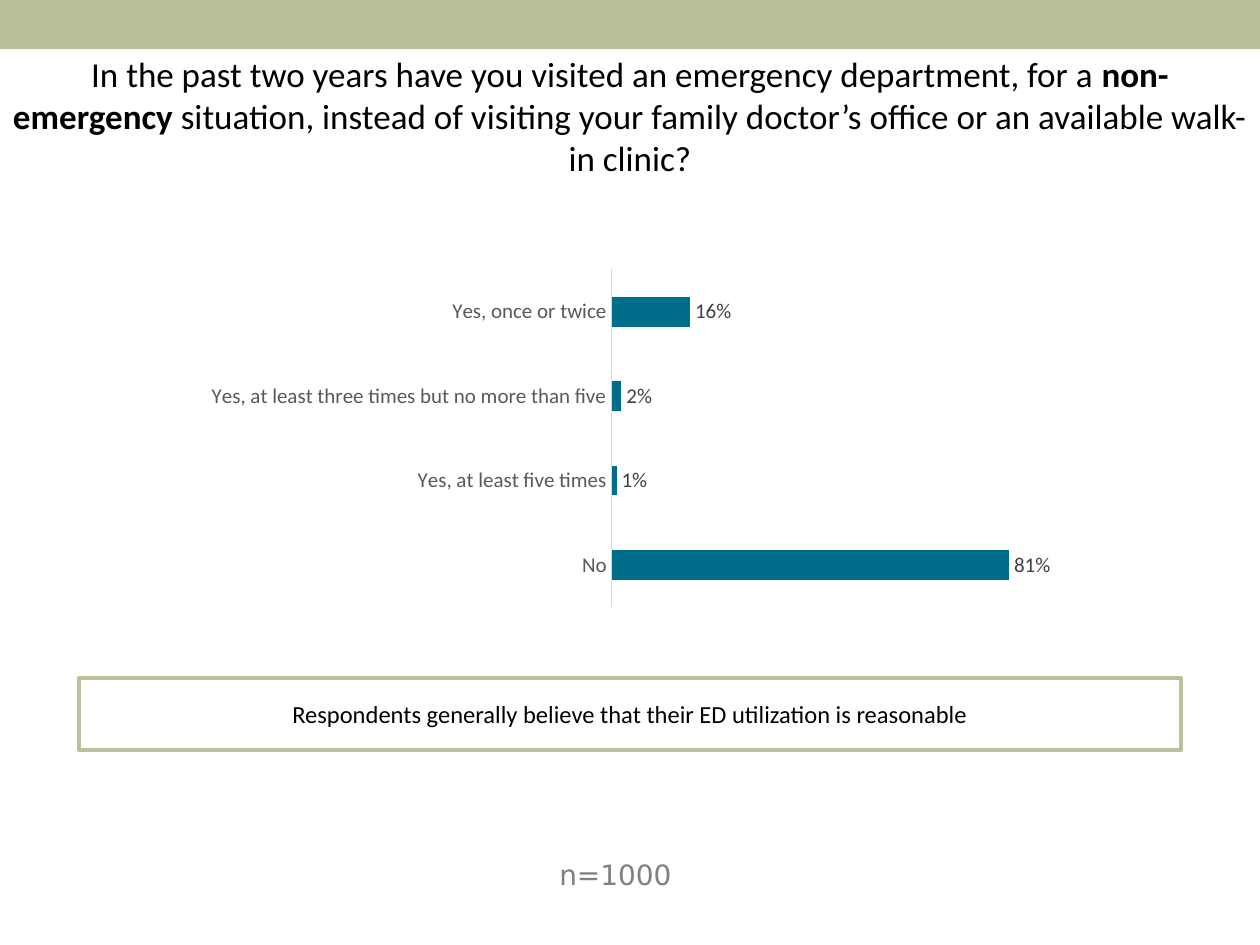
from dataclasses import dataclass

from lxml import etree
from pptx import Presentation
from pptx.chart.data import CategoryChartData
from pptx.dml.color import RGBColor
from pptx.enum.chart import XL_CHART_TYPE, XL_LABEL_POSITION, XL_TICK_MARK
from pptx.enum.shapes import MSO_SHAPE
from pptx.enum.text import MSO_ANCHOR, MSO_AUTO_SIZE, PP_ALIGN
from pptx.oxml.ns import qn
from pptx.util import Inches, Pt

BAR_CLUSTERED = XL_CHART_TYPE.BAR_CLUSTERED
OUTSIDE_END = XL_LABEL_POSITION.OUTSIDE_END
NO_TICK = XL_TICK_MARK.NONE
RECTANGLE = MSO_SHAPE.RECTANGLE
TOP, MIDDLE = MSO_ANCHOR.TOP, MSO_ANCHOR.MIDDLE
NO_FIT = MSO_AUTO_SIZE.NONE
CENTER = PP_ALIGN.CENTER


@dataclass(frozen=True)
class Theme:
    sage: str = "BBC09B"
    teal: str = "006D8A"
    white: str = "FFFFFF"
    black: str = "000000"
    axis_text: str = "595959"
    axis_line: str = "D9D9D9"
    label_text: str = "404040"
    note_text: str = "808080"
    font: str = "Calibri"
    note_font: str = "DejaVu Sans"
    title_size: int = 20
    note_size: int = 16
    body_size: int = 14
    chart_size: int = 12


theme = Theme()
deck = Presentation()
deck.slide_width, deck.slide_height = Inches(10), Inches(7.5)
slide = deck.slides.add_slide(deck.slide_layouts[5])


def area(left, top, width, height):
    """Turn percentages of the slide into left, top, width and height."""
    across, down = deck.slide_width / 100, deck.slide_height / 100
    return int(left * across), int(top * down), int(width * across), int(height * down)


def style(font, size, color, name=theme.font, bold=False):
    font.name, font.size, font.bold = name, Pt(size), bold
    font.color.rgb = RGBColor.from_string(color)


# Top band and takeaway box
takeaway = "Respondents generally believe that their ED utilization is reasonable"
for place, fill, text in [
    (area(0, 0, 100, 5.2), theme.sage, ""),
    (area(6.25, 71.75, 87.5, 7.6), theme.white, takeaway),
]:
    box = slide.shapes.add_shape(RECTANGLE, *place)
    box.shadow.inherit = False
    box.fill.solid()
    box.fill.fore_color.rgb = RGBColor.from_string(fill)
    if not text:
        box.line.fill.background()
        continue
    box.line.color.rgb = RGBColor.from_string(theme.sage)
    box.line.width = Pt(2)
    box.text_frame.text = text
    box.text_frame.vertical_anchor = MIDDLE
    para = box.text_frame.paragraphs[0]
    para.alignment = CENTER
    style(para.runs[0].font, theme.body_size, theme.black)

# Question as the slide title
title = slide.shapes.title
title.left, title.top, title.width, title.height = area(0, 4.93, 100, 6)
frame = title.text_frame
frame.word_wrap, frame.auto_size, frame.vertical_anchor = True, NO_FIT, TOP
para = frame.paragraphs[0]
para.alignment = CENTER
for text, bold in [
    ("In the past two years have you visited an emergency department, for a ", False),
    ("non-emergency", True),
    (" situation, instead of visiting your family doctor’s office"
     " or an available walk-in clinic?", False),
]:
    span = para.add_run()
    span.text = text
    style(span.font, theme.title_size, theme.black, bold=bold)

# Bar chart of the answers
answers = {
    "Yes, once or twice": 0.16,
    "Yes, at least three times but no more than five": 0.02,
    "Yes, at least five times": 0.01,
    "No": 0.81,
}
data = CategoryChartData(number_format="0%")
data.categories = list(answers)
data.add_series("Series 1", list(answers.values()))
chart = slide.shapes.add_chart(BAR_CLUSTERED, *area(14.9, 25.73, 70.1, 39.73), data).chart
chart.has_legend = chart.has_title = False
style(chart.font, theme.chart_size, theme.black)

categories = chart.category_axis
categories.reverse_order = True
categories.major_tick_mark = categories.minor_tick_mark = NO_TICK
categories.format.line.color.rgb = RGBColor.from_string(theme.axis_line)
categories.format.line.width = Pt(0.75)
style(categories.tick_labels.font, theme.chart_size, theme.axis_text)

values = chart.value_axis
values.visible = values.has_major_gridlines = False
values.minimum_scale, values.maximum_scale = 0, 0.9

plot = chart.plots[0]
plot.gap_width = 182
plot.vary_by_categories = False
bars = plot.series[0]
bars.format.fill.solid()
bars.format.fill.fore_color.rgb = RGBColor.from_string(theme.teal)
labels = bars.data_labels
labels.show_value = True
labels.position = OUTSIDE_END
labels.number_format, labels.number_format_is_linked = "0%", False
style(labels.font, theme.chart_size, theme.label_text)

# Fixed inner plot area, as shares of the chart
plot_area = chart._chartSpace.find(".//" + qn("c:plotArea"))
for layout in plot_area.findall(qn("c:layout")):
    plot_area.remove(layout)
layout = etree.Element(qn("c:layout"))
plot_area.insert(0, layout)
manual = etree.SubElement(layout, qn("c:manualLayout"))
for tag, value in [
    ("layoutTarget", "inner"), ("xMode", "edge"), ("yMode", "edge"),
    ("x", "0.48"), ("y", "0.07"), ("w", "0.5"), ("h", "0.9"),
]:
    etree.SubElement(manual, qn("c:" + tag)).set("val", value)

# Sample size
note = slide.shapes.add_textbox(*area(43.4, 90.1, 13.2, 4.7))
note.text_frame.word_wrap = True
note.text_frame.text = "n=1000"
style(note.text_frame.paragraphs[0].runs[0].font,
      theme.note_size, theme.note_text, theme.note_font)

deck.save("out.pptx")
